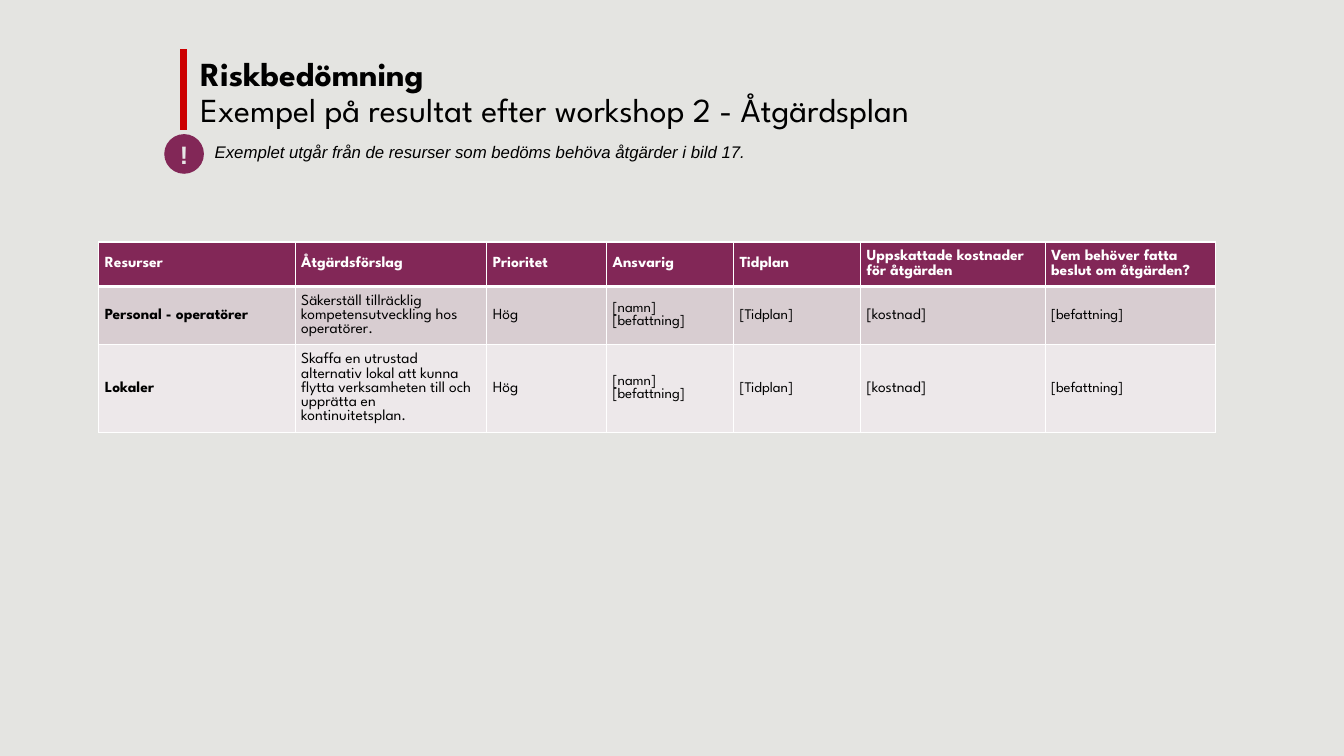
from pptx import Presentation
from pptx.dml.color import RGBColor
from pptx.enum.shapes import MSO_CONNECTOR, MSO_SHAPE
from pptx.enum.text import MSO_ANCHOR, PP_ALIGN
from pptx.oxml import parse_xml
from pptx.oxml.ns import nsdecls
from pptx.util import Cm, Pt

PAPER = RGBColor(0xE4, 0xE4, 0xE1)
PLUM = RGBColor(0x82, 0x27, 0x57)
ROSE = RGBColor(0xD8, 0xCD, 0xD1)
PALE = RGBColor(0xED, 0xE8, 0xEA)
RED = RGBColor(0xCC, 0x00, 0x00)
GREY = RGBColor(0xE7, 0xE6, 0xE6)
BLACK = RGBColor(0, 0, 0)
WHITE = RGBColor(0xFF, 0xFF, 0xFF)
SPARTAN = "League Spartan"


def add_run(para, text, size, color, face=SPARTAN, bold=False, italic=False):
    run = para.add_run()
    run.text = text
    font = run.font
    font.name, font.size, font.bold, font.italic = face, Pt(size), bold, italic
    font.color.rgb = color


def add_edges(cell, top, bottom):
    """Give a cell white borders; top and bottom are widths in points."""
    props = cell._tc.get_or_add_tcPr()
    widths = {"lnL": 1, "lnR": 1, "lnT": top, "lnB": bottom}
    for spot, (tag, width) in enumerate(widths.items()):
        props.insert(spot, parse_xml(
            f'<a:{tag} {nsdecls("a")} w="{Pt(width)}"><a:solidFill>'
            f'<a:srgbClr val="{WHITE}"/></a:solidFill></a:{tag}>'))


deck = Presentation()
deck.slide_width, deck.slide_height = Cm(33.87), Cm(19.05)
slide = deck.slides.add_slide(deck.slide_layouts[6])
slide.background.fill.solid()
slide.background.fill.fore_color.rgb = PAPER
shapes = slide.shapes

# Action plan table
heads = ["Resurser", "Åtgärdsförslag", "Prioritet", "Ansvarig", "Tidplan",
         "Uppskattade kostnader\nför åtgärden",
         "Vem behöver fatta\nbeslut om åtgärden?"]
tail = ["Hög", "[namn]\n[befattning]", "[Tidplan]", "[kostnad]", "[befattning]"]
rows = [
    heads,
    ["Personal - operatörer",
     "Säkerställ tillräcklig kompetensutveckling hos operatörer.", *tail],
    ["Lokaler",
     "Skaffa en utrustad alternativ lokal att kunna flytta verksamheten "
     "till och upprätta en kontinuitetsplan.", *tail],
]
wides = [4.95, 4.83, 3.02, 3.2, 3.2, 4.65, 4.29]
highs = [1.12, 1.46, 2.2]
fills = [PLUM, ROSE, PALE]
small = (3, 4, 6)

frame = shapes.add_table(len(rows), len(wides), Cm(2.49), Cm(6.1),
                         Cm(sum(wides)), Cm(sum(highs)))
table = frame.table
for col, wide in zip(table.columns, wides):
    col.width = Cm(wide)
for r, texts in enumerate(rows):
    table.rows[r].height = Cm(highs[r])
    head = r == 0
    for c, text in enumerate(texts):
        cell = table.cell(r, c)
        cell.fill.solid()
        cell.fill.fore_color.rgb = fills[r]
        cell.vertical_anchor = MSO_ANCHOR.MIDDLE
        cell.margin_left = Cm(0.15)
        cell.margin_right = Cm(0 if head else 0.15)
        cell.margin_top = cell.margin_bottom = Cm(0.1 if head else 0.2)
        add_edges(cell, 3 if r == 1 else 1, 3 if head else 1)
        size = 10.5 if not head and c in small else 11
        para = cell.text_frame.paragraphs[0]
        for i, line in enumerate(text.split("\n")):
            if i and head:
                para.add_line_break()
            elif i:
                para = cell.text_frame.add_paragraph()
            add_run(para, line, size, WHITE if head else BLACK,
                    bold=head or c == 0)

# Title with red bar
title = shapes.add_textbox(Cm(4.8), Cm(1.32), Cm(24.97), Cm(2.03))
title.text_frame.word_wrap = True
para = title.text_frame.paragraphs[0]
para.line_spacing = 0.9
add_run(para, "Riskbedömning", 24, BLACK, bold=True)
para.add_line_break()
add_run(para, "Exempel på resultat efter workshop 2 - Åtgärdsplan", 24, BLACK)

bar = shapes.add_connector(MSO_CONNECTOR.STRAIGHT, Cm(4.62), Cm(1.24),
                           Cm(4.62), Cm(3.28))
bar.line.color.rgb = RED
bar.line.width = Pt(5)
bar._element.spPr.append(parse_xml(f'<a:effectLst {nsdecls("a")}/>'))

# Note with badge
badge = shapes.add_shape(MSO_SHAPE.OVAL, Cm(4.14), Cm(3.38), Cm(1), Cm(1))
badge.shadow.inherit = False
badge.fill.solid()
badge.fill.fore_color.rgb = PLUM
badge.line.fill.background()
mark = badge.text_frame
mark.margin_left = mark.margin_right = mark.margin_top = mark.margin_bottom = 0
mark.vertical_anchor = MSO_ANCHOR.MIDDLE
mark.paragraphs[0].alignment = PP_ALIGN.CENTER
add_run(mark.paragraphs[0], "!", 18, GREY, "Arial", bold=True)

note = shapes.add_textbox(Cm(5.16), Cm(3.45), Cm(18.21), Cm(0.77))
note.text_frame.word_wrap = True
add_run(note.text_frame.paragraphs[0],
        "Exemplet utgår från de resurser som bedöms behöva åtgärder i bild 17.",
        12, BLACK, "Arial", italic=True)

deck.save("out.pptx")
